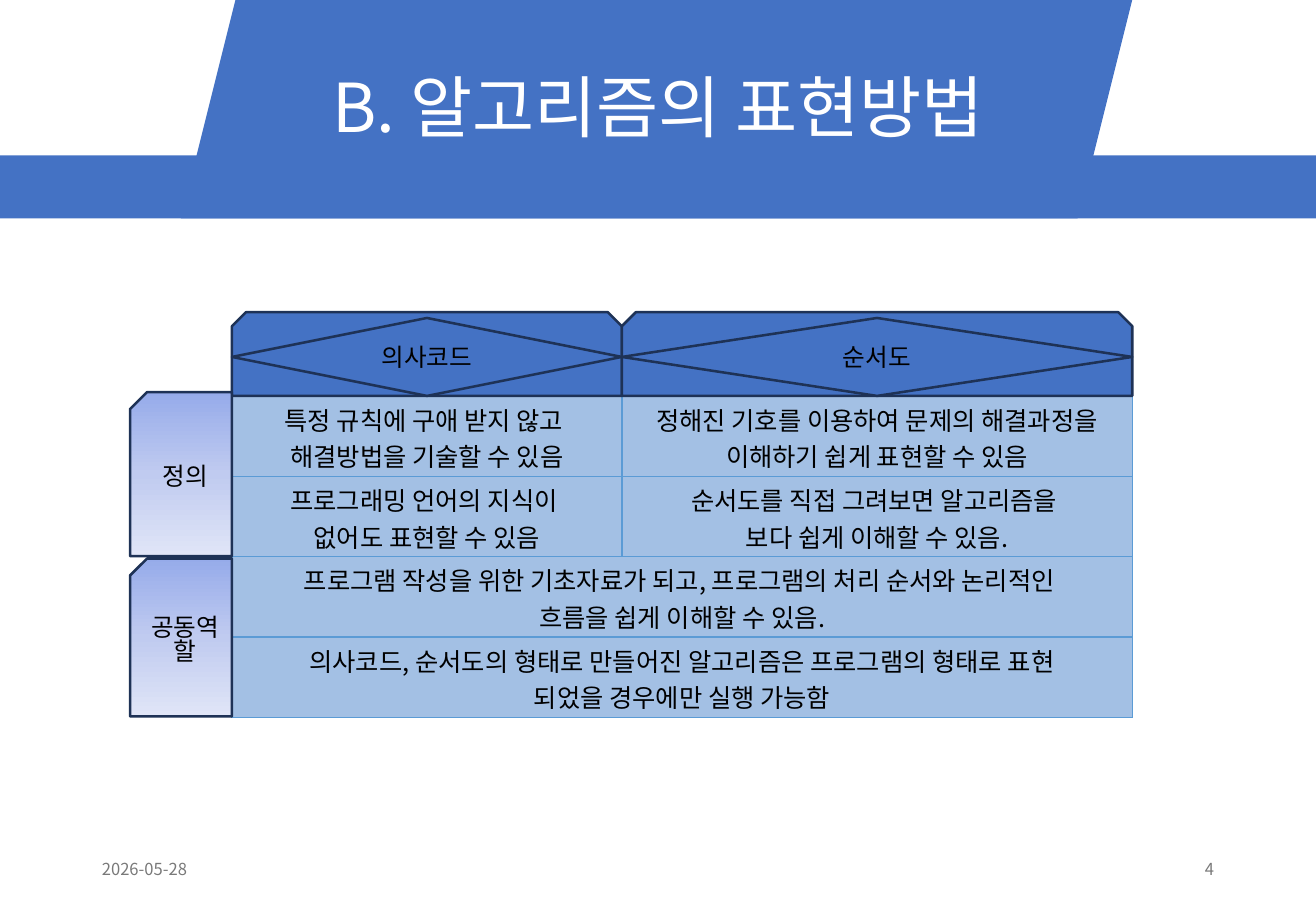
from copy import deepcopy
from dataclasses import dataclass
from typing import Optional

from lxml import etree
from pptx import Presentation
from pptx.dml.color import RGBColor
from pptx.enum import shapes, text
from pptx.oxml import ns
from pptx.util import Cm, Pt

MSO = shapes.MSO_SHAPE
ALIGN = text.PP_ALIGN


@dataclass(frozen=True)
class Theme:
    font: str = "Noto Sans CJK KR"
    blue: str = "4472C4"
    outline: str = "1E3256"
    cell: str = "A3C0E4"
    border: str = "5B9BD5"
    ink: str = "000000"
    white: str = "FFFFFF"
    grey: str = "797979"
    gradient: tuple[str, ...] = ("96ABEA", "C0CBF0", "E0E5F7")
    title_size: float = 40
    cell_size: float = 15
    label_size: float = 14.6
    footer_size: float = 9.8


@dataclass(frozen=True)
class Box:
    x: float
    y: float
    w: float
    h: float

    def emu(self) -> tuple[Cm, Cm, Cm, Cm]:
        return Cm(self.x), Cm(self.y), Cm(self.w), Cm(self.h)


@dataclass(frozen=True)
class Header:
    label: str
    width: float


@dataclass(frozen=True)
class SideTab:
    label: str
    y: float
    h: float


@dataclass(frozen=True)
class Footer:
    label: str
    x: float
    align: ALIGN


THEME = Theme()
WIDTH, HEIGHT = 27.51, 19.05
TABLE_X, TABLE_Y, ROW_H = 4.85, 8.28, 1.68
HEADERS = [Header("의사코드", 8.15), Header("순서도", 10.67)]
SIDE_TABS = [SideTab("정의", 8.2, 3.43), SideTab("공동역할", 11.68, 3.3)]
FOOTERS = [Footer("2026-05-28", 1.88, ALIGN.LEFT), Footer("4", 19.43, ALIGN.RIGHT)]
ROWS = [
    ["특정 규칙에 구애 받지 않고 \n해결방법을 기술할 수 있음",
     "정해진 기호를 이용하여 문제의 해결과정을 이해하기 쉽게 표현할 수 있음"],
    ["프로그래밍 언어의 지식이 \n없어도 표현할 수 있음",
     "순서도를 직접 그려보면 알고리즘을 \n보다 쉽게 이해할 수 있음."],
    ["프로그램 작성을 위한 기초자료가 되고, 프로그램의 처리 순서와 논리적인 \n흐름을 쉽게 이해할 수 있음."],
    ["의사코드, 순서도의 형태로 만들어진 알고리즘은 프로그램의 형태로 표현\n되었을 경우에만 실행 가능함"],
]


def rgb(value: str) -> RGBColor:
    return RGBColor.from_string(value)


def write(tf, content: str, *, size: float, color: str = THEME.ink,
          align: ALIGN = ALIGN.CENTER, spacing: Optional[float] = None) -> None:
    tf.text = content
    tf.word_wrap = True
    for p in tf.paragraphs:
        p.alignment = align
        if spacing:
            p.line_spacing = spacing
        for r in p.runs:
            r.font.size = Pt(size)
            r.font.color.rgb = rgb(color)
            r.font.name = THEME.font
            ea = etree.SubElement(r.font._element, ns.qn("a:ea"))
            ea.set("typeface", THEME.font)


def add_text(slide, box: Box, content: str, **fmt) -> None:
    tf = slide.shapes.add_textbox(*box.emu()).text_frame
    write(tf, content, **fmt)
    tf.vertical_anchor = text.MSO_ANCHOR.MIDDLE


def add_shape(slide, kind: MSO, box: Box, *, outlined: bool = True):
    sp = slide.shapes.add_shape(kind, *box.emu())
    sp.shadow.inherit = False
    sp.fill.solid()
    sp.fill.fore_color.rgb = rgb(THEME.blue)
    if outlined:
        sp.line.color.rgb = rgb(THEME.outline)
        sp.line.width = Pt(1.5)
    else:
        sp.line.fill.background()
    return sp


def add_header(slide, header: Header, x: float) -> None:
    add_shape(slide, MSO.SNIP_2_SAME_RECTANGLE, Box(x, 6.53, header.width, 1.75))
    sp = add_shape(slide, MSO.DIAMOND, Box(x, 6.65, header.width, 1.63))
    write(sp.text_frame, header.label, size=THEME.label_size)


def add_side_tab(slide, tab: SideTab) -> None:
    sp = add_shape(slide, MSO.SNIP_1_RECTANGLE, Box(2.72, tab.y, 2.13, tab.h))
    sp._element.spPr.get_or_add_xfrm().set("flipH", "1")
    sp.fill.gradient()
    sp.fill.gradient_angle = 270
    stops = sp._element.spPr.find(".//" + ns.qn("a:gsLst"))
    stops.insert(1, deepcopy(stops[0]))
    for i, (stop, color) in enumerate(zip(sp.fill.gradient_stops, THEME.gradient)):
        stop.position = i / 2
        stop.color.rgb = rgb(color)
    write(sp.text_frame, tab.label, size=THEME.label_size, spacing=0.8)


def style_cell(cell) -> None:
    tc_pr = cell._tc.get_or_add_tcPr()
    for side in ("lnL", "lnR", "lnT", "lnB"):
        ln = etree.SubElement(tc_pr, ns.qn(f"a:{side}"), w=str(Pt(1)))
        fill = etree.SubElement(ln, ns.qn("a:solidFill"))
        etree.SubElement(fill, ns.qn("a:srgbClr"), val=THEME.border)
    cell.fill.solid()
    cell.fill.fore_color.rgb = rgb(THEME.cell)
    cell.margin_left = cell.margin_right = Cm(0.2)
    cell.margin_top = cell.margin_bottom = Cm(0.1)


def add_comparison(slide) -> None:
    box = Box(TABLE_X, TABLE_Y, sum(h.width for h in HEADERS), ROW_H * len(ROWS))
    table = slide.shapes.add_table(len(ROWS), len(HEADERS), *box.emu()).table
    table.first_row = table.horz_banding = False
    for column, header in zip(table.columns, HEADERS):
        column.width = Cm(header.width)
    for cell in table.iter_cells():
        style_cell(cell)
    for i, row in enumerate(ROWS):
        if len(row) == 1:
            table.cell(i, 0).merge(table.cell(i, len(HEADERS) - 1))
        for j, content in enumerate(row):
            write(table.cell(i, j).text_frame, content, size=THEME.cell_size)


def main() -> None:
    prs = Presentation()
    prs.slide_width, prs.slide_height = Cm(WIDTH), Cm(HEIGHT)
    slide = prs.slides.add_slide(prs.slide_layouts[6])
    add_shape(slide, MSO.RECTANGLE, Box(0, 3.25, WIDTH, 1.32), outlined=False)
    add_shape(slide, MSO.PARALLELOGRAM, Box(3.78, 0, 19.89, 4.57), outlined=False)
    add_text(slide, Box(0, 0.05, WIDTH, 4.52), "B. 알고리즘의 표현방법",
             size=THEME.title_size, color=THEME.white, spacing=0.9)
    add_comparison(slide)
    for footer in FOOTERS:
        add_text(slide, Box(footer.x, 17.65, 6.2, 1.02), footer.label,
                 size=THEME.footer_size, color=THEME.grey, align=footer.align)
    x = TABLE_X
    for header in HEADERS:
        add_header(slide, header, x)
        x += header.width
    for tab in SIDE_TABS:
        add_side_tab(slide, tab)
    prs.save("out.pptx")


if __name__ == "__main__":
    main()
